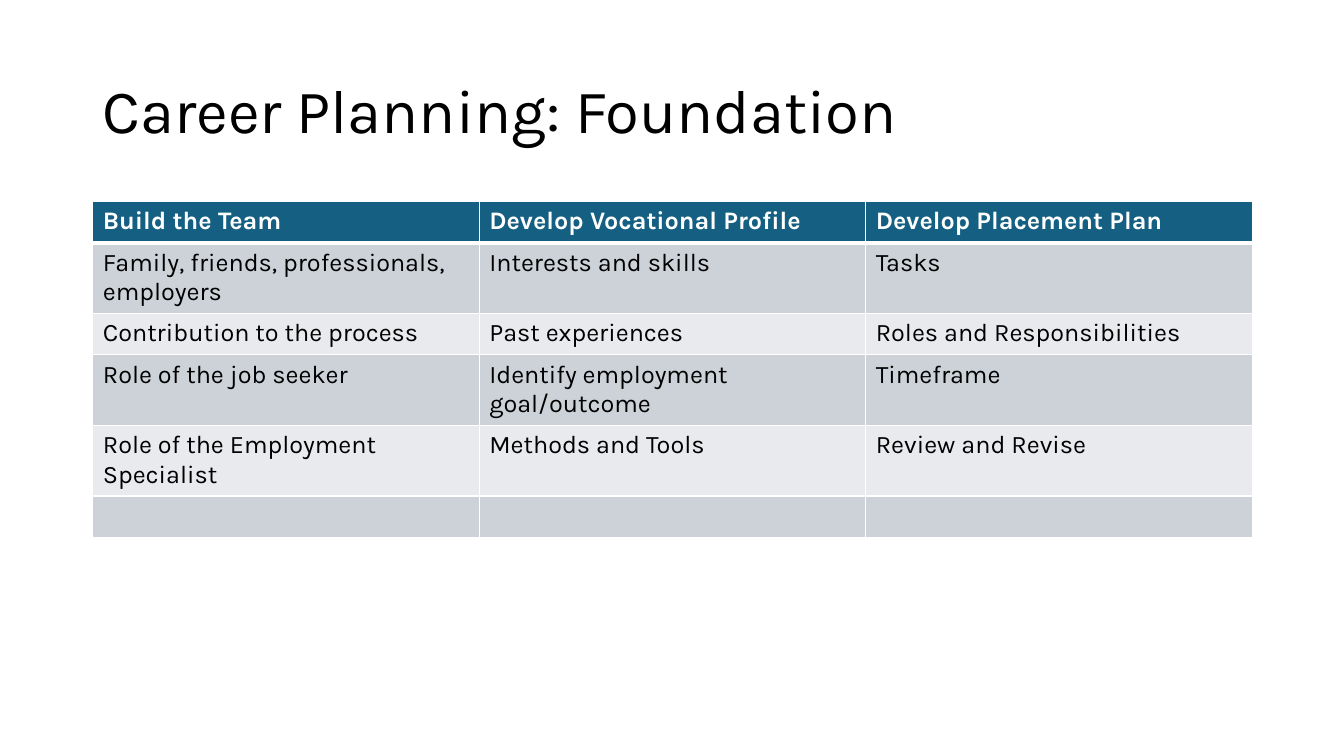
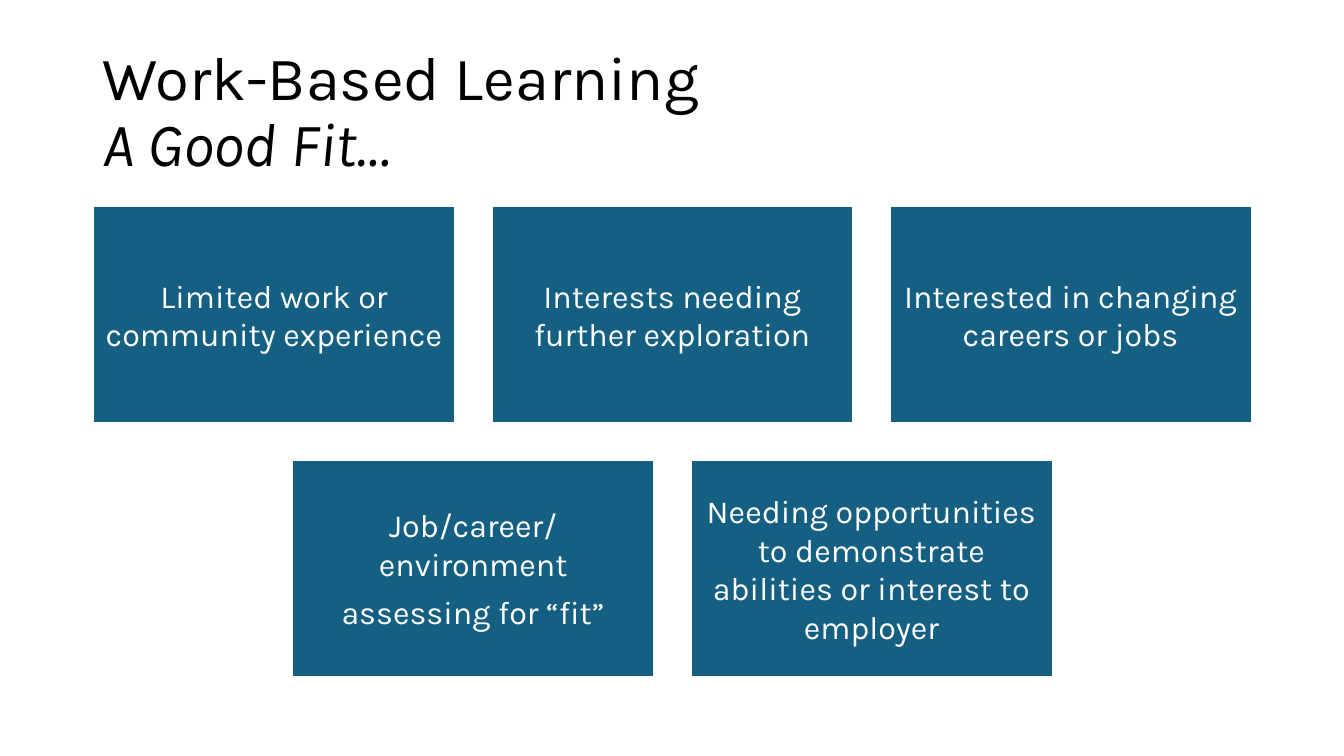
"""Build two slides on career planning and work-based learning."""
from lxml.etree import SubElement
from pptx import Presentation
from pptx.dml.color import RGBColor
from pptx.enum.shapes import MSO_SHAPE
from pptx.enum.text import MSO_ANCHOR, PP_ALIGN
from pptx.oxml.ns import qn
from pptx.util import Inches, Pt

COLORS = {
    "text": "000000",
    "white": "FFFFFF",
    "accent": "156082",
    "odd_row": "CCD2D8",
    "even_row": "E8EAED",
}
FONT = "Karla"
LEFT, CONTENT_WIDTH = 0.92, 11.5
ROW_HEIGHT = 0.41
CARD_WIDTH, CARD_HEIGHT, CARD_GAP, CARDS_TOP = 3.59, 2.16, 0.36, 2.04

PLANNING_ROWS = [
    ["Build the Team", "Develop Vocational Profile", "Develop Placement Plan"],
    ["Family, friends, professionals, employers", "Interests and skills", "Tasks"],
    ["Contribution to the process", "Past experiences", "Roles and Responsibilities"],
    ["Role of the job seeker", "Identify employment goal/outcome", "Timeframe"],
    ["Role of the Employment Specialist", "Methods and Tools", "Review and Revise"],
    ["", "", ""],
]
CARD_ROWS = [
    [
        ["Limited work or community experience"],
        ["Interests needing further exploration"],
        ["Interested in changing careers or jobs"],
    ],
    [
        ["Job/career/environment", "assessing for “fit”"],
        ["Needing opportunities to demonstrate abilities or interest to employer"],
    ],
]


def color(name):
    return RGBColor.from_string(COLORS[name])


def style_font(paragraph, size, color_name, bold=False):
    font = paragraph.font
    font.name, font.size, font.bold = FONT, Pt(size), bold
    font.color.rgb = color(color_name)


def add_title(slide, title, subtitle=None):
    shape = slide.shapes.add_textbox(
        Inches(LEFT), Inches(0.4), Inches(CONTENT_WIDTH), Inches(1.45))
    frame = shape.text_frame
    frame.word_wrap = True
    frame.vertical_anchor = MSO_ANCHOR.MIDDLE
    paragraph = frame.paragraphs[0]
    paragraph.line_spacing = 0.9
    style_font(paragraph, 44, "text")
    paragraph.add_run().text = title
    if subtitle:
        paragraph.add_line_break()
        run = paragraph.add_run()
        run.text = subtitle
        run.font.italic = True


def set_borders(cell, top, bottom):
    properties = cell._tc.get_or_add_tcPr()
    for side, width in (("L", 1), ("R", 1), ("T", top), ("B", bottom)):
        line = SubElement(properties, qn(f"a:ln{side}"), w=str(Pt(width)))
        fill = SubElement(line, qn("a:solidFill"))
        SubElement(fill, qn("a:srgbClr"), val=COLORS["white"])


def add_table(slide, rows):
    column_count = len(rows[0])
    table = slide.shapes.add_table(
        len(rows), column_count, Inches(LEFT), Inches(2),
        Inches(CONTENT_WIDTH), Inches(ROW_HEIGHT * len(rows))).table
    for column in table.columns:
        column.width = Inches(CONTENT_WIDTH / column_count)
    for row_index, texts in enumerate(rows):
        header = row_index == 0
        fill_name = "accent" if header else ("even_row", "odd_row")[row_index % 2]
        for column_index, text in enumerate(texts):
            cell = table.cell(row_index, column_index)
            set_borders(cell, 3 if row_index == 1 else 1, 3 if header else 1)
            cell.fill.solid()
            cell.fill.fore_color.rgb = color(fill_name)
            cell.text = text
            style_font(cell.text_frame.paragraphs[0], 18,
                       "white" if header else "text", header)


def add_card(slide, left, top, lines):
    shape = slide.shapes.add_shape(
        MSO_SHAPE.RECTANGLE, Inches(left), Inches(top),
        Inches(CARD_WIDTH), Inches(CARD_HEIGHT))
    shape.shadow.inherit = False
    shape.fill.solid()
    shape.fill.fore_color.rgb = color("accent")
    shape.line.color.rgb = color("white")
    shape.line.width = Pt(1.5)
    frame = shape.text_frame
    frame.word_wrap = True
    frame.vertical_anchor = MSO_ANCHOR.MIDDLE
    frame.margin_left = frame.margin_right = Inches(0.1)
    frame.margin_top = frame.margin_bottom = Inches(0.1)
    frame.text = "\n".join(lines)
    for paragraph in frame.paragraphs:
        paragraph.alignment = PP_ALIGN.CENTER
        paragraph.space_after = Pt(7)
        style_font(paragraph, 23, "white")


def add_card_grid(slide, card_rows):
    for row_index, cards in enumerate(card_rows):
        row_width = len(cards) * (CARD_WIDTH + CARD_GAP) - CARD_GAP
        row_left = LEFT + (CONTENT_WIDTH - row_width) / 2
        top = CARDS_TOP + row_index * (CARD_HEIGHT + CARD_GAP)
        for column_index, lines in enumerate(cards):
            left = row_left + column_index * (CARD_WIDTH + CARD_GAP)
            add_card(slide, left, top, lines)


def add_slide(presentation, title, subtitle=None):
    slide = presentation.slides.add_slide(presentation.slide_layouts[6])
    slide.background.fill.solid()
    slide.background.fill.fore_color.rgb = color("white")
    add_title(slide, title, subtitle)
    return slide


def main():
    presentation = Presentation()
    presentation.slide_width = Inches(13.33)
    presentation.slide_height = Inches(7.5)
    add_table(add_slide(presentation, "Career Planning: Foundation"), PLANNING_ROWS)
    add_card_grid(add_slide(presentation, "Work-Based Learning", "A Good Fit…"), CARD_ROWS)
    presentation.save("out.pptx")


if __name__ == "__main__":
    main()
